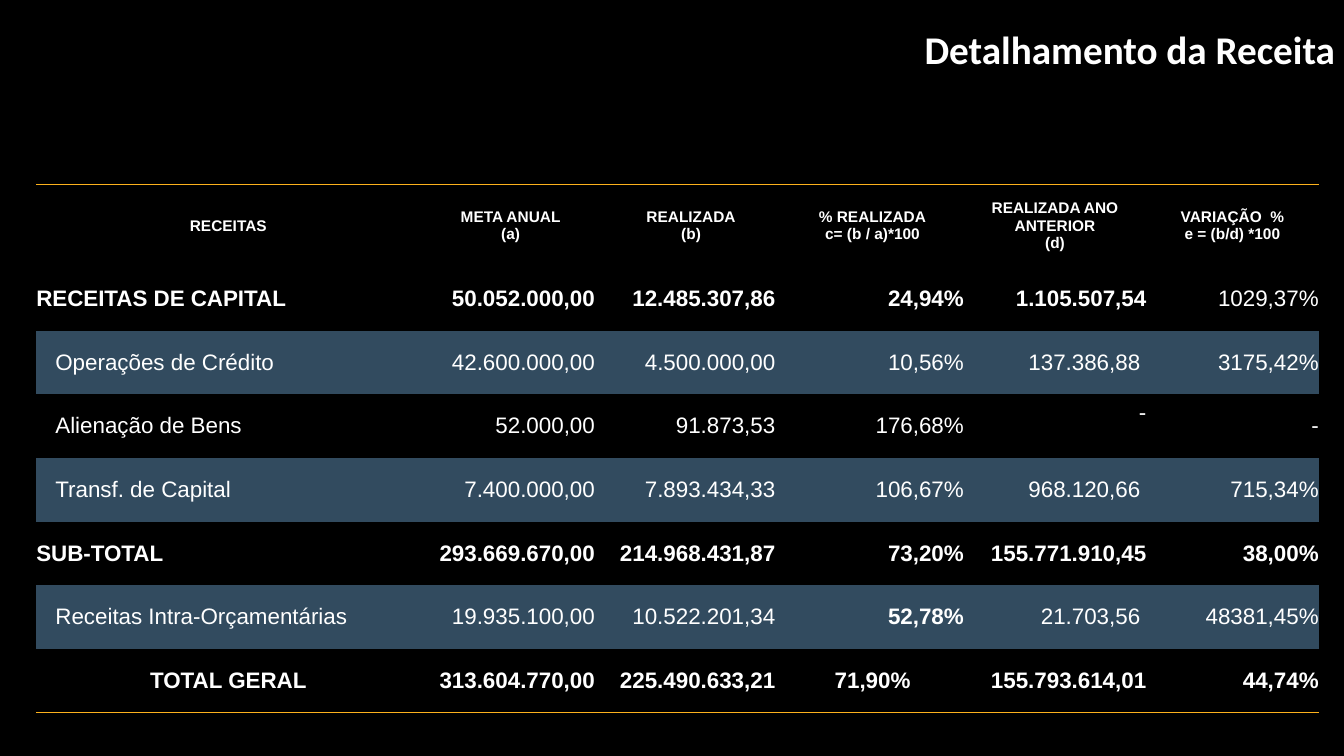
from collections import namedtuple
from dataclasses import dataclass

from lxml import etree
from pptx import Presentation
from pptx import util as u
from pptx.dml.color import RGBColor
from pptx.enum import text
from pptx.oxml import ns


@dataclass(frozen=True)
class Theme:
    background: str = "000000"
    ink: str = "FFFFFF"
    band: str = "324B5F"
    rule: str = "FCB11C"
    title_font: str = "Calibri"
    table_font: str = "Arial"
    title_size: int = 28
    header_size: int = 11
    body_size: int = 16
    rule_width: int = 1


THEME = Theme()
Box = namedtuple("Box", "left top width height")
LEFT, CENTER, RIGHT = (text.PP_ALIGN.LEFT, text.PP_ALIGN.CENTER, text.PP_ALIGN.RIGHT)

COLUMN_WIDTHS = [3.81, 1.79, 1.79, 1.81, 1.81, 1.71]
HEADER_HEIGHT = 0.82
INDENT = 0.19
FIGURE_GAP = 0.06  # room right of amounts
PRIOR_YEAR, SHARE, VARIATION = 4, 3, 5
PLAIN_STYLE = "{2D5ABB26-0587-4C30-8999-92F81FD0307C}"

HEADERS = ["RECEITAS", "META ANUAL\n(a)", "REALIZADA\n(b)", "% REALIZADA\nc= (b / a)*100",
           "REALIZADA ANO ANTERIOR\n(d)", "VARIAÇÃO  %\ne = (b/d) *100"]
# Row kind, then the six values
ROWS = [
    ("group", "RECEITAS DE CAPITAL", "50.052.000,00", "12.485.307,86", "24,94%", "1.105.507,54", "1029,37%"),
    ("item", "Operações de Crédito", "42.600.000,00", "4.500.000,00", "10,56%", "137.386,88", "3175,42%"),
    ("item", "Alienação de Bens", "52.000,00", "91.873,53", "176,68%", "-", "-"),
    ("item", "Transf. de Capital", "7.400.000,00", "7.893.434,33", "106,67%", "968.120,66", "715,34%"),
    ("group", "SUB-TOTAL", "293.669.670,00", "214.968.431,87", "73,20%", "155.771.910,45", "38,00%"),
    ("item", "Receitas Intra-Orçamentárias", "19.935.100,00", "10.522.201,34", "52,78%", "21.703,56", "48381,45%"),
    ("total", "TOTAL GERAL", "313.604.770,00", "225.490.633,21", "71,90%", "155.793.614,01", "44,74%"),
]
# Cells whose weight departs from their row: (row, column)
WEIGHT_EXCEPTIONS = {(1, VARIATION), (6, SHARE)}


def write(frame, content, *, size, font=THEME.table_font, bold=False, align=LEFT):
    """Fill a text frame, one paragraph per line."""
    frame.word_wrap = True
    for index, line in enumerate(content.split("\n")):
        para = frame.paragraphs[0] if index == 0 else frame.add_paragraph()
        para.alignment = align
        span = para.add_run()
        span.text = line
        span.font.name = font
        span.font.size = u.Pt(size)
        span.font.bold = bold
        span.font.color.rgb = RGBColor.from_string(THEME.ink)


def draw_rule(cell, side):
    """Draw a cell border; side is lnT or lnB."""
    line = etree.Element(ns.qn(f"a:{side}"), w=str(u.Pt(THEME.rule_width)))
    fill = etree.SubElement(line, ns.qn("a:solidFill"))
    etree.SubElement(fill, ns.qn("a:srgbClr"), val=THEME.rule)
    cell._tc.get_or_add_tcPr().insert(0, line)


def set_cell(cell, content, *, left=0, right=0, bottom=0, fill=None, **style):
    cell.margin_left, cell.margin_right = u.Inches(left), u.Inches(right)
    cell.margin_top, cell.margin_bottom = 0, u.Inches(bottom)
    cell.vertical_anchor = text.MSO_ANCHOR.MIDDLE
    if fill:
        cell.fill.solid()
        cell.fill.fore_color.rgb = RGBColor.from_string(fill)
    else:
        cell.fill.background()
    write(cell.text_frame, content, **style)


def add_title(page, box):
    shape = page.shapes.add_textbox(*map(u.Inches, box))
    write(shape.text_frame, "Detalhamento da Receita", size=THEME.title_size,
          font=THEME.title_font, bold=True, align=RIGHT)


def set_body_row(table, row, kind, values):
    for column, value in enumerate(values):
        bold = (kind != "item") != ((row, column) in WEIGHT_EXCEPTIONS)
        align, left, right, bottom = RIGHT, 0, 0, 0
        if column == 0:
            align = CENTER if kind == "total" else LEFT
            left = INDENT if kind == "item" else 0
        elif column == SHARE and kind == "total":
            align = CENTER
        elif column == PRIOR_YEAR:
            # A missing amount sits raised, at the edge
            missing = value == "-"
            right = 0 if bold or missing else FIGURE_GAP
            bottom = 0.26 if missing else 0
        elif column < SHARE:
            right = FIGURE_GAP
        set_cell(table.cell(row, column), value, left=left, right=right, bottom=bottom,
                 fill=THEME.band if kind == "item" and row % 2 == 0 else None,
                 size=THEME.body_size, bold=bold, align=align)


def add_revenue_table(page, box):
    frame = page.shapes.add_table(len(ROWS) + 1, len(HEADERS), *map(u.Inches, box))
    table = frame.table
    table.first_row = table.horz_banding = False
    table._tbl.tblPr.find(ns.qn("a:tableStyleId")).text = PLAIN_STYLE

    # Column widths and row heights
    for column, width in zip(table.columns, COLUMN_WIDTHS):
        column.width = u.Inches(width)
    for index, row in enumerate(table.rows):
        body_height = (box.height - HEADER_HEIGHT) / len(ROWS)
        row.height = u.Inches(body_height if index else HEADER_HEIGHT)

    # Header and body
    for column, label in enumerate(HEADERS):
        set_cell(table.cell(0, column), label, size=THEME.header_size, bold=True, align=CENTER)
    for row, (kind, *values) in enumerate(ROWS, start=1):
        set_body_row(table, row, kind, values)

    # Rules above and below
    for column in range(len(HEADERS)):
        draw_rule(table.cell(0, column), "lnT")
        draw_rule(table.cell(len(ROWS), column), "lnB")


def main():
    deck = Presentation()
    deck.slide_width, deck.slide_height = u.Inches(13.33), u.Inches(7.5)
    page = deck.slides.add_slide(deck.slide_layouts[6])
    page.background.fill.solid()
    page.background.fill.fore_color.rgb = RGBColor.from_string(THEME.background)
    add_title(page, Box(4.91, 0.2, 8.43, 0.57))
    add_revenue_table(page, Box(0.36, 1.83, 12.72, 5.24))
    deck.save("out.pptx")


if __name__ == "__main__":
    main()
